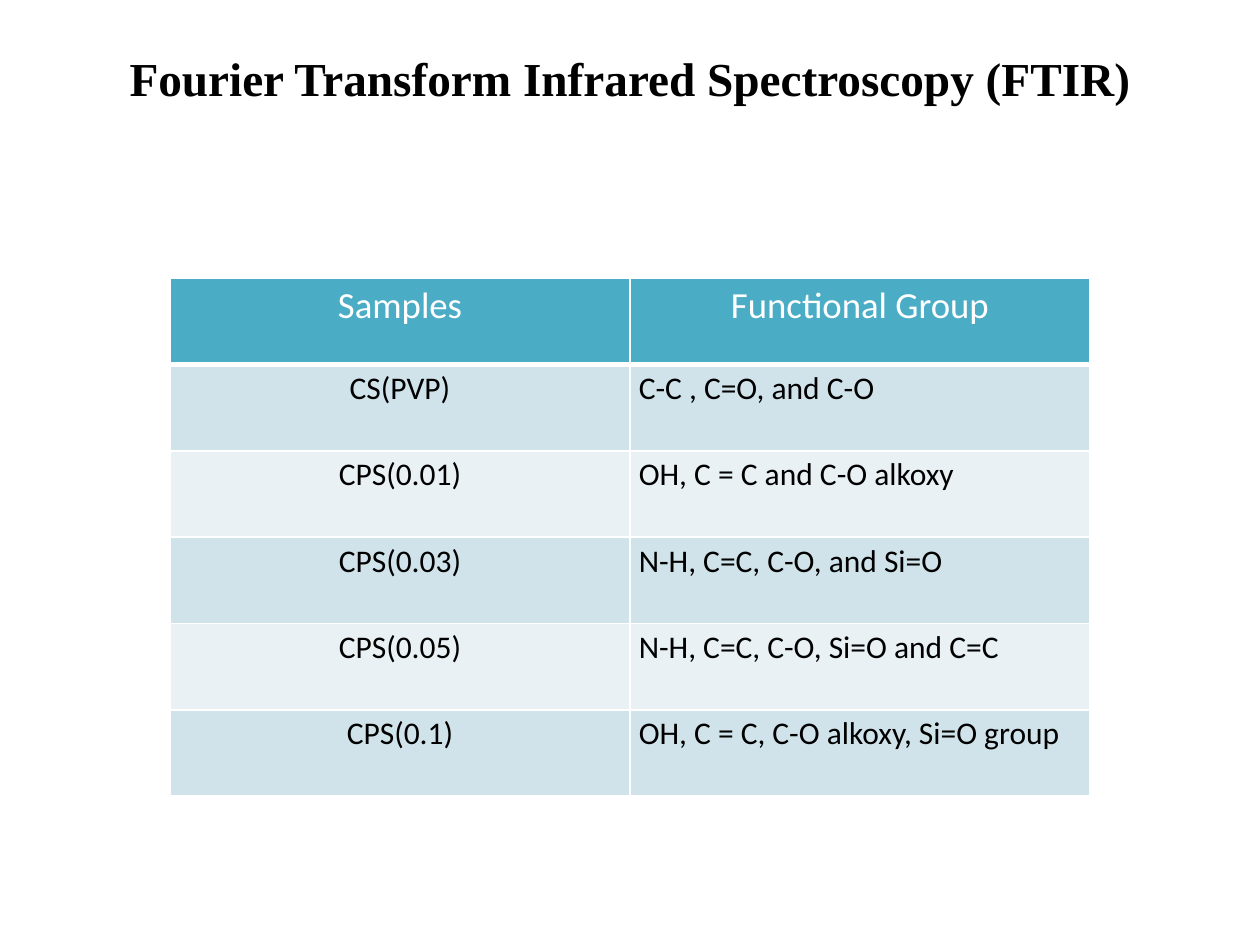
from lxml import etree
from pptx import Presentation
from pptx.dml.color import RGBColor
from pptx.enum.text import MSO_ANCHOR, PP_ALIGN
from pptx.oxml.ns import qn
from pptx.util import Inches, Pt

CENTER, LEFT = PP_ALIGN.CENTER, PP_ALIGN.LEFT
MIDDLE, TOP = MSO_ANCHOR.MIDDLE, MSO_ANCHOR.TOP
COLORS = {"text": "000000", "white": "FFFFFF", "header": "4BACC6",
          "band_dark": "D0E3EA", "band_light": "E9F1F5"}
ROWS = [
    ("Samples", "Functional Group"),
    ("CS(PVP)", "C-C , C=O, and C-O"),
    ("CPS(0.01)", "OH, C = C and C-O alkoxy"),
    ("CPS(0.03)", "N-H, C=C, C-O, and Si=O"),
    ("CPS(0.05)", "N-H, C=C, C-O, Si=O and C=C"),
    ("CPS(0.1)", "OH, C = C, C-O alkoxy, Si=O group"),
]


def add_text(tf, text, size=18, font="Calibri", color="text", bold=False, align=LEFT):
    """Write one formatted paragraph into a text frame."""
    p = tf.paragraphs[0]
    p.alignment = align
    r = p.add_run()
    r.text = text
    r.font.size, r.font.name, r.font.bold = Pt(size), font, bold
    r.font.color.rgb = RGBColor.from_string(COLORS[color])


def set_borders(cell, color, bottom=1):
    """Draw solid 1 pt borders round a cell, with its own bottom width."""
    tc_pr = cell._tc.get_or_add_tcPr()
    for side, width in (("L", 1), ("R", 1), ("T", 1), ("B", bottom)):
        line = etree.SubElement(tc_pr, qn(f"a:ln{side}"), w=str(Pt(width)))
        fill = etree.SubElement(line, qn("a:solidFill"))
        etree.SubElement(fill, qn("a:srgbClr"), val=COLORS[color])


def add_title(s, left, top, width, height):
    """Place the slide title, raised above the middle of its box."""
    sp = s.shapes.title
    sp.left, sp.top, sp.width, sp.height = map(Inches, (left, top, width, height))
    tf = sp.text_frame
    tf.word_wrap = True
    tf.vertical_anchor = MIDDLE
    tf.margin_bottom = Inches(0.67)
    add_text(tf, "Fourier Transform Infrared Spectroscopy (FTIR)", size=27,
             font="Times New Roman", bold=True, align=CENTER)


def add_samples_table(s, left, top, width, height):
    """Place the banded table of samples and functional groups."""
    box = map(Inches, (left, top, width, height))
    table = s.shapes.add_table(len(ROWS), len(ROWS[0]), *box).table
    for i, row in enumerate(ROWS):
        header = i == 0
        fill = "header" if header else ("band_light", "band_dark")[i % 2]
        for j, text in enumerate(row):
            cell = table.cell(i, j)
            cell.margin_left = cell.margin_right = Inches(0.07)
            cell.margin_top = cell.margin_bottom = Inches(0.04)
            cell.vertical_anchor = TOP
            set_borders(cell, "white", bottom=3 if header else 1)
            cell.fill.solid()
            cell.fill.fore_color.rgb = RGBColor.from_string(COLORS[fill])
            add_text(cell.text_frame, text, size=21 if header else 18,
                     color="white" if header else "text",
                     align=CENTER if header or j == 0 else LEFT)


def main():
    """Build and save the slide."""
    prs = Presentation()
    prs.slide_width, prs.slide_height = Inches(10), Inches(7.5)
    s = prs.slides.add_slide(prs.slide_layouts[5])
    add_title(s, 0.5, 0.3, 9, 1.25)
    add_samples_table(s, 1.35, 2.21, 7.3, 4.11)
    prs.save("out.pptx")


if __name__ == "__main__":
    main()
